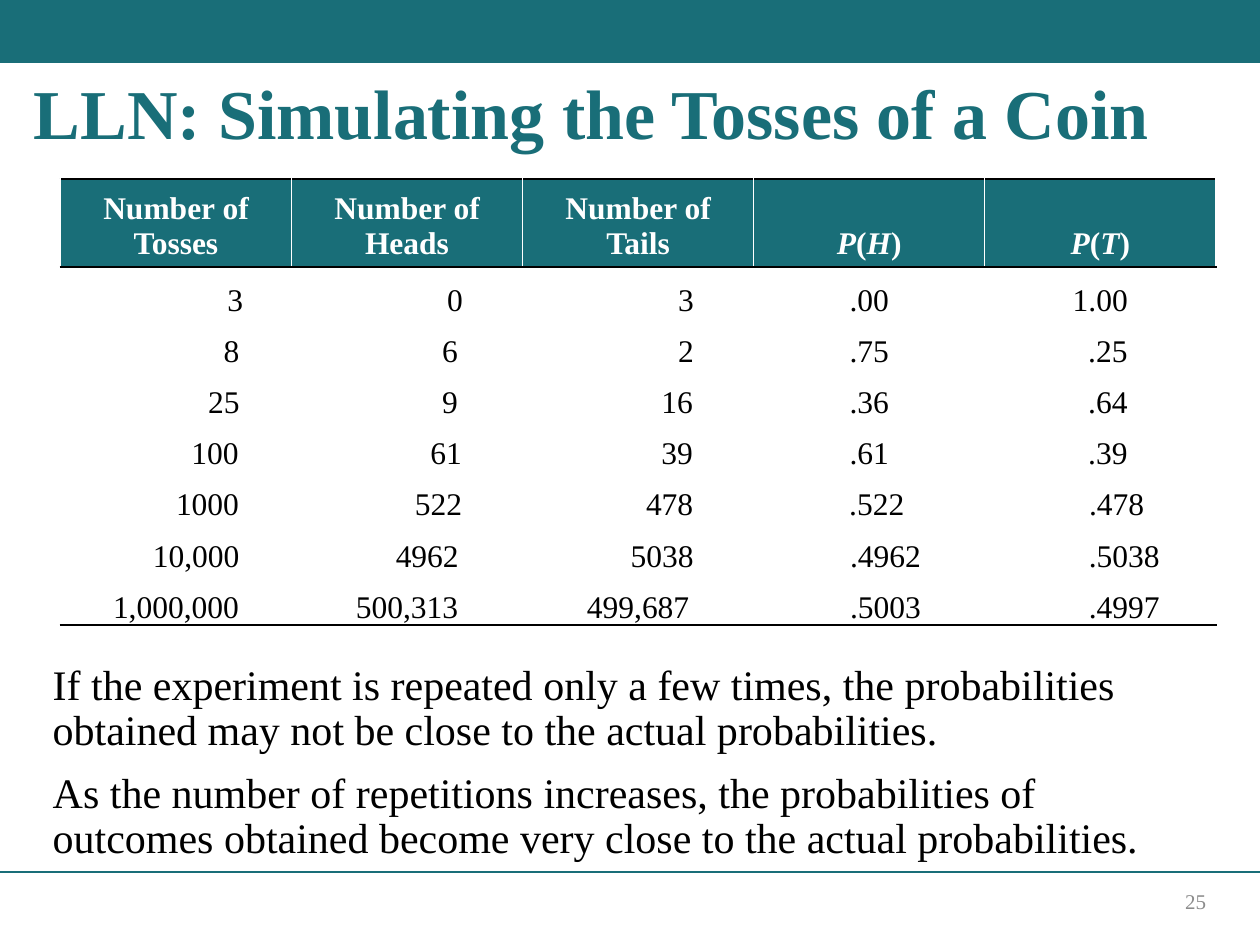
from lxml.etree import SubElement
from pptx import Presentation
from pptx.dml.color import RGBColor
from pptx.enum.shapes import MSO_CONNECTOR, MSO_SHAPE
from pptx.enum.text import MSO_ANCHOR, PP_ALIGN
from pptx.oxml.ns import qn
from pptx.util import Inches, Pt

TEAL, BLACK, WHITE, GREY = "196E78", "000000", "FFFFFF", "8C8C8C"
FONT = "Times New Roman"

TITLE = "LLN: Simulating the Tosses of a Coin"
HEADINGS = ["Number of Tosses", "Number of Heads", "Number of Tails", "P(H)", "P(T)"]
# Each entry is a value and its left indent in inches
TOSSES = [
    [("3", 0.94), ("0", 0.76), ("3", 0.76), (".00", 0), ("1.00", 0)],
    [("8", 0.88), ("6", 0.68), ("2", 0.76), (".75", 0), (".25", 0.12)],
    [("25", 0.76), ("9", 0.68), ("16", 0.62), (".36", 0), (".64", 0.12)],
    [("100", 0.62), ("61", 0.62), ("39", 0.62), (".61", 0), (".39", 0.12)],
    [("1000", 0.5), ("522", 0.5), ("478", 0.5), (".522", 0.12), (".478", 0.26)],
    [("10,000", 0.32), ("4962", 0.32), ("5038", 0.38), (".4962", 0.26), (".5038", 0.38)],
    [("1,000,000", 0), ("500,313", 0), ("499,687", 0), (".5003", 0.26), (".4997", 0.38)],
]
CONCLUSIONS = [
    "If the experiment is repeated only a few times, the probabilities "
    "obtained may not be close to the actual probabilities.",
    "As the number of repetitions increases, the probabilities of "
    "outcomes obtained become very close to the actual probabilities.",
]
PAGE_NUMBER = "25"


def rgb(color):
    return RGBColor.from_string(color)


def format_runs(paragraph, size, color, bold=False):
    for run in paragraph.runs:
        run.font.name = FONT
        run.font.size = Pt(size)
        run.font.bold = bold
        run.font.color.rgb = rgb(color)


def add_text(slide, box, paragraphs, size, color, bold=False, line_spacing=None,
             gap=0, align=PP_ALIGN.LEFT, anchor=MSO_ANCHOR.TOP):
    frame = slide.shapes.add_textbox(*map(Inches, box)).text_frame
    frame.word_wrap = True
    frame.vertical_anchor = anchor
    frame.text = "\n".join(paragraphs)
    for index, paragraph in enumerate(frame.paragraphs):
        paragraph.alignment = align
        paragraph.line_spacing = line_spacing
        paragraph.space_before = Pt(gap if index else 0)
        format_runs(paragraph, size, color, bold)


def add_border(cell, side):
    line = SubElement(cell._tc.get_or_add_tcPr(), qn(f"a:ln{side}"), w=str(Pt(1)))
    fill = SubElement(line, qn("a:solidFill"))
    SubElement(fill, qn("a:srgbClr"), val=BLACK)


def set_cell(cell, margins, borders, indent=0):
    cell.margin_left = cell.margin_right = Inches(margins[0])
    cell.margin_top, cell.margin_bottom = Inches(margins[1]), Inches(margins[2])
    cell.vertical_anchor = MSO_ANCHOR.BOTTOM
    for side in borders:
        add_border(cell, side)
    paragraph = cell.text_frame.paragraphs[0]
    paragraph.alignment = PP_ALIGN.CENTER
    if indent:
        paragraph._p.get_or_add_pPr().set("marL", str(Inches(indent)))
    return paragraph


def add_heading(cell, heading):
    paragraph = set_cell(cell, (0.1, 0.05, 0.05), "TB")
    cell.fill.solid()
    cell.fill.fore_color.rgb = rgb(TEAL)
    # In a probability heading such as P(H) the letters are italic
    is_probability = heading.startswith("P(")
    for part in heading if is_probability else [heading]:
        run = paragraph.add_run()
        run.text = part
        run.font.italic = is_probability and part.isalpha()
    format_runs(paragraph, 18, WHITE, bold=True)


def add_value(cell, value, indent, borders):
    paragraph = set_cell(cell, (0.01, 0.01, 0), borders, indent)
    cell.fill.background()
    paragraph.text = value
    format_runs(paragraph, 18, BLACK)


def add_toss_table(slide):
    header_height, values_height = 0.65, 2.84
    table = slide.shapes.add_table(
        len(TOSSES) + 1, len(HEADINGS), Inches(0.48), Inches(1.42),
        Inches(9.17), Inches(header_height + values_height)).table
    table.first_row = table.horz_banding = False
    table.rows[0].height = Inches(header_height)
    for column, heading in enumerate(HEADINGS):
        add_heading(table.cell(0, column), heading)
    for row, values in enumerate(TOSSES, start=1):
        table.rows[row].height = Inches(values_height / len(TOSSES))
        borders = {1: "T", len(TOSSES): "B"}.get(row, "")
        for column, (value, indent) in enumerate(values):
            add_value(table.cell(row, column), value, indent, borders)


def main():
    prs = Presentation()
    prs.slide_width, prs.slide_height = Inches(10), Inches(7.5)
    slide = prs.slides.add_slide(prs.slide_layouts[6])

    # Top band and footer rule
    band = slide.shapes.add_shape(MSO_SHAPE.RECTANGLE, 0, 0, prs.slide_width, Inches(0.5))
    band.shadow.inherit = False
    band.fill.solid()
    band.fill.fore_color.rgb = rgb(TEAL)
    band.line.fill.background()
    rule = slide.shapes.add_connector(
        MSO_CONNECTOR.STRAIGHT, 0, Inches(6.92), prs.slide_width, Inches(6.92))
    rule.line.color.rgb = rgb(TEAL)
    rule.line.width = Pt(1)
    SubElement(rule._element.spPr, qn("a:effectLst"))

    # Title, table, conclusions and page number
    add_text(slide, (0.17, 0.58, 9.67, 0.72), [TITLE], 40, TEAL, bold=True, line_spacing=0.9)
    add_toss_table(slide)
    add_text(slide, (0.32, 5.22, 9.33, 1.73), CONCLUSIONS, 24, BLACK, line_spacing=0.9, gap=10)
    add_text(slide, (8.75, 6.95, 0.92, 0.4), [PAGE_NUMBER], 12, GREY,
             align=PP_ALIGN.RIGHT, anchor=MSO_ANCHOR.MIDDLE)

    prs.save("out.pptx")


if __name__ == "__main__":
    main()
